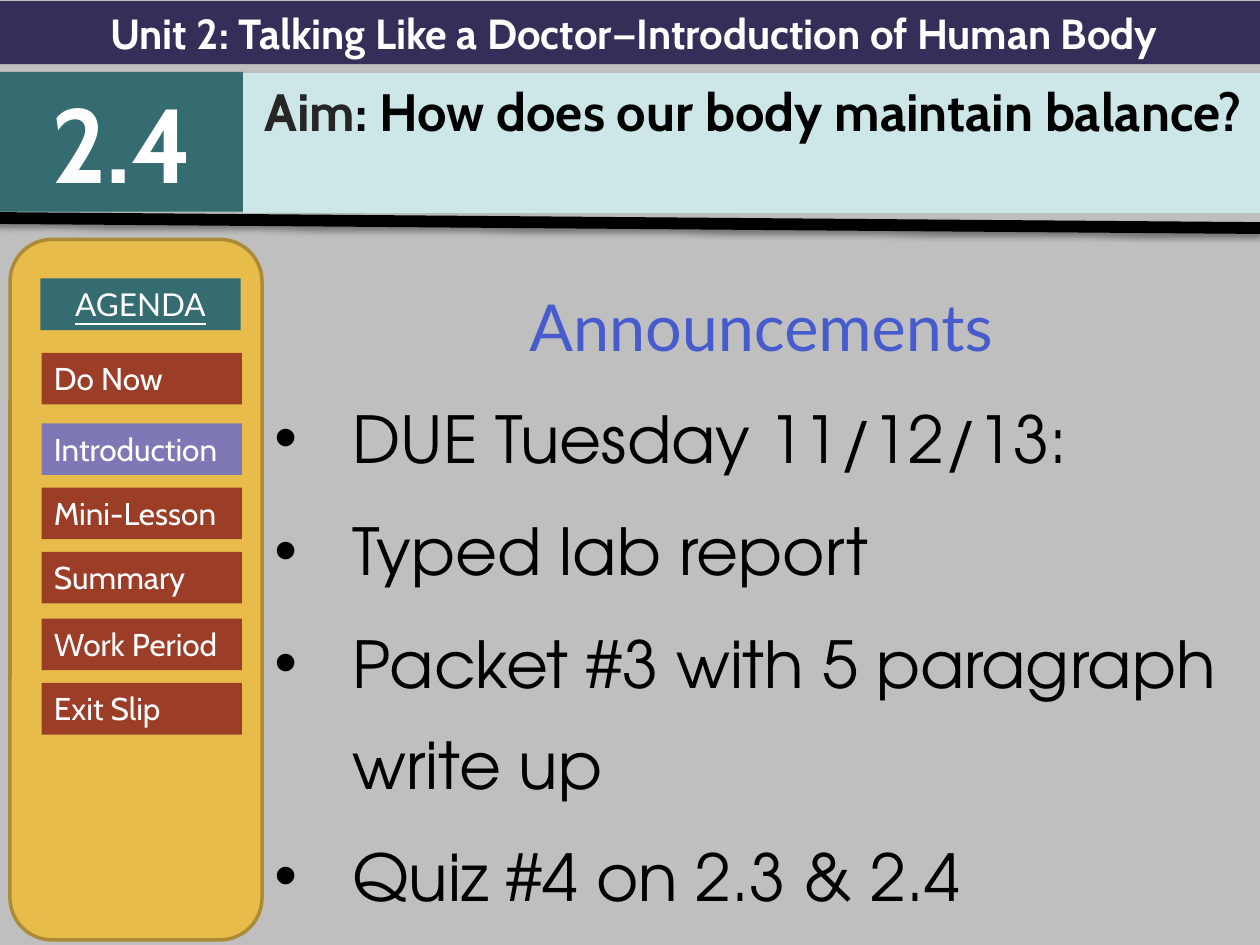
from lxml.etree import SubElement
from pptx import Presentation
from pptx.dml.color import RGBColor
from pptx.enum.shapes import MSO_CONNECTOR as Connector, MSO_SHAPE as Shape
from pptx.enum.text import MSO_ANCHOR as Anchor, PP_ALIGN as Align
from pptx.oxml.ns import qn
from pptx.util import Inches, Pt

GREY = RGBColor(0xBF, 0xBF, 0xBF)
INDIGO = RGBColor(0x34, 0x2F, 0x59)
TEAL = RGBColor(0x34, 0x6C, 0x71)
PALE_TEAL = RGBColor(0xCD, 0xE6, 0xE8)
GOLD = RGBColor(0xE8, 0xBC, 0x4A)
DARK_GOLD = RGBColor(0xAC, 0x8B, 0x37)
RUST = RGBColor(0x9C, 0x3D, 0x28)
LILAC = RGBColor(0x7E, 0x78, 0xB7)
BLUE = RGBColor(0x47, 0x5B, 0xCD)
CHARCOAL = RGBColor(0x26, 0x26, 0x26)
BLACK = RGBColor(0, 0, 0)
WHITE = RGBColor(0xFF, 0xFF, 0xFF)

AGENDA = [
    ("Do Now", 2.8, RUST),
    ("Introduction", 3.36, LILAC),
    ("Mini-Lesson", 3.87, RUST),
    ("Summary", 4.38, RUST),
    ("Work Period", 4.91, RUST),
    ("Exit Slip", 5.42, RUST),
]
ANNOUNCEMENTS = [
    "DUE Tuesday 11/12/13:",
    "Typed lab report",
    "Packet #3 with 5 paragraph write up",
    "Quiz #4 on 2.3 & 2.4",
]


def add_text(paragraph, text, size=18, font="Cabin", color=WHITE,
             bold=False, underline=False, align=Align.LEFT):
    paragraph.alignment = align
    run = paragraph.add_run()
    run.text = text
    run.font.size = Pt(size)
    run.font.name = font
    run.font.color.rgb = color
    run.font.bold = bold
    run.font.underline = underline


def add_panel(shapes, left, top, width, height, fill, kind=Shape.RECTANGLE):
    """Add a plain filled shape and return it."""
    panel = shapes.add_shape(kind, Inches(left), Inches(top),
                             Inches(width), Inches(height))
    panel.shadow.inherit = False
    panel.fill.solid()
    panel.fill.fore_color.rgb = fill
    panel.line.fill.background()
    panel.text_frame.word_wrap = True
    panel.text_frame.vertical_anchor = Anchor.TOP
    return panel


def add_header(shapes):
    heading = {"bold": True, "align": Align.CENTER}
    unit = add_panel(shapes, 0, 0.01, 10.06, 0.5, INDIGO)
    add_text(unit.text_frame.paragraphs[0],
             "Unit 2: Talking Like a Doctor—Introduction of Human Body",
             size=24, **heading)
    number = add_panel(shapes, 0, 0.57, 1.93, 1.11, TEAL)
    add_text(number.text_frame.paragraphs[0], "2.4", size=60, **heading)
    aim = add_panel(shapes, 1.93, 0.58, 8.1, 1.11, PALE_TEAL)
    question = aim.text_frame.paragraphs[0]
    add_text(question, "Aim", size=30, color=CHARCOAL, **heading)
    add_text(question, ": How does our body maintain balance?",
             size=30, color=BLACK, **heading)


def add_divider(shapes):
    """Add the heavy sloping rule with its soft shadow below."""
    divider = shapes.add_connector(Connector.STRAIGHT, Inches(-0.05),
                                   Inches(1.73), Inches(10), Inches(1.81))
    divider.line.color.rgb = BLACK
    divider.line.width = Pt(6.75)
    effects = SubElement(divider._element.spPr, qn("a:effectLst"))
    shadow = SubElement(effects, qn("a:outerShdw"), blurRad=str(Pt(3.1)),
                        dist=str(Pt(1.6)), dir="5400000", rotWithShape="0")
    tint = SubElement(shadow, qn("a:srgbClr"), val=str(BLACK))
    SubElement(tint, qn("a:alpha"), val="38000")


def add_agenda(shapes):
    board = add_panel(shapes, 0.08, 1.9, 2, 5.56, GOLD, Shape.ROUNDED_RECTANGLE)
    board.line.color.rgb = DARK_GOLD
    board.line.width = Pt(2)
    title = add_panel(shapes, 0.32, 2.21, 1.59, 0.41, TEAL)
    add_text(title.text_frame.paragraphs[0], "AGENDA", font="Lato",
             underline=True, align=Align.CENTER)
    for label, top, fill in AGENDA:
        step = add_panel(shapes, 0.33, top, 1.59, 0.41, fill)
        add_text(step.text_frame.paragraphs[0], label)


def add_bullet(paragraph):
    properties = paragraph._p.get_or_add_pPr()
    properties.set("marL", str(Inches(0.62)))
    properties.set("indent", str(Inches(-0.62)))
    SubElement(properties, qn("a:buFont"), typeface="Arial")
    SubElement(properties, qn("a:buChar"), char="•")


def add_announcements(shapes):
    body = shapes.add_textbox(Inches(2.08), Inches(2.04),
                              Inches(7.92), Inches(5.46)).text_frame
    body.word_wrap = True
    add_text(body.paragraphs[0], "Announcements", size=37, font="Lato",
             color=BLUE, align=Align.CENTER)
    for item in ANNOUNCEMENTS:
        add_text(body.add_paragraph(), item, size=37,
                 font="TeX Gyre Adventor", color=BLACK)
    for paragraph in body.paragraphs:
        paragraph.line_spacing = 1.3
        paragraph.space_before = Pt(6.5)
    for paragraph in body.paragraphs[1:]:
        add_bullet(paragraph)


def main():
    deck = Presentation()
    deck.slide_width, deck.slide_height = Inches(10), Inches(7.5)
    slide = deck.slides.add_slide(deck.slide_layouts[6])
    slide.background.fill.solid()
    slide.background.fill.fore_color.rgb = GREY
    add_announcements(slide.shapes)
    add_header(slide.shapes)
    add_divider(slide.shapes)
    add_agenda(slide.shapes.add_group_shape().shapes)
    deck.save("out.pptx")


if __name__ == "__main__":
    main()
